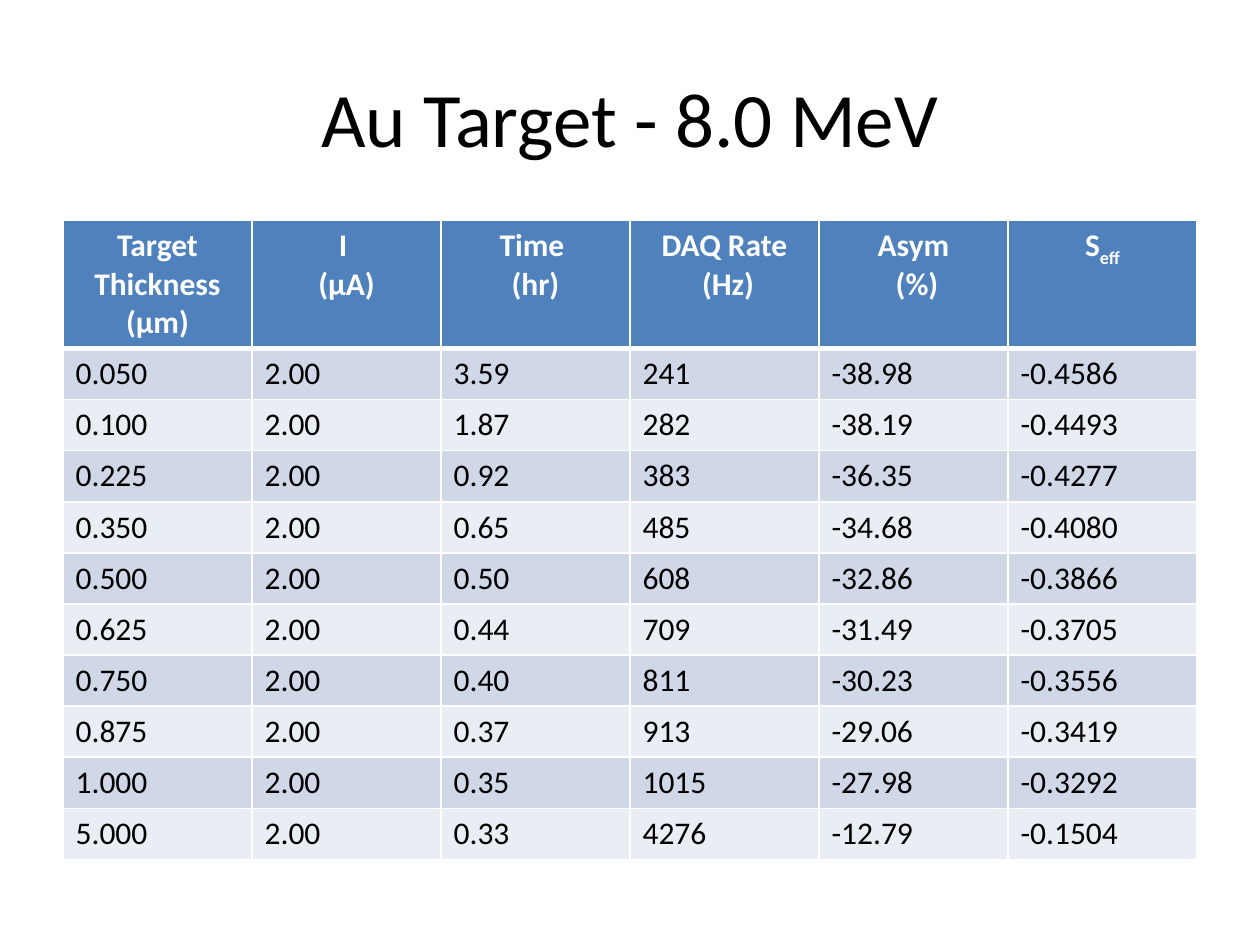
from lxml import etree
from pptx import Presentation
from pptx.dml.color import RGBColor
from pptx.enum.text import MSO_ANCHOR, PP_ALIGN
from pptx.oxml.ns import qn
from pptx.util import Pt

CENTER, LEFT = PP_ALIGN.CENTER, PP_ALIGN.LEFT
MIDDLE = MSO_ANCHOR.MIDDLE
TITLE_ONLY = 5

COLORS = {
    "text": "000000",
    "white": "FFFFFF",
    "header": "4F81BD",
    "band_dark": "D0D8E8",
    "band_light": "E9EDF4",
}

HEADERS = ["Target Thickness (µm)", "I \n(µA)", "Time \n(hr)",
           "DAQ Rate\n (Hz)", "Asym\n (%)", "S"]
MEASUREMENTS = [
    ["0.050", "2.00", "3.59", "241", "-38.98", "-0.4586"],
    ["0.100", "2.00", "1.87", "282", "-38.19", "-0.4493"],
    ["0.225", "2.00", "0.92", "383", "-36.35", "-0.4277"],
    ["0.350", "2.00", "0.65", "485", "-34.68", "-0.4080"],
    ["0.500", "2.00", "0.50", "608", "-32.86", "-0.3866"],
    ["0.625", "2.00", "0.44", "709", "-31.49", "-0.3705"],
    ["0.750", "2.00", "0.40", "811", "-30.23", "-0.3556"],
    ["0.875", "2.00", "0.37", "913", "-29.06", "-0.3419"],
    ["1.000", "2.00", "0.35", "1015", "-27.98", "-0.3292"],
    ["5.000", "2.00", "0.33", "4276", "-12.79", "-0.1504"],
]


class SlideBuilder:
    font = "Calibri"
    title_size = 44
    table_size = 18

    def __init__(self, slide):
        self.slide = slide

    def format_text(self, tf, size, color, align, bold=False):
        for p in tf.paragraphs:
            p.alignment = align
            for r in p.runs:
                r.font.name = self.font
                r.font.size = Pt(size)
                r.font.bold = bold
                r.font.color.rgb = RGBColor.from_string(COLORS[color])

    def title(self, text, left, top, width, height):
        sp = self.slide.shapes.title
        sp.left, sp.top, sp.width, sp.height = map(Pt, (left, top, width, height))
        tf = sp.text_frame
        tf.text = text
        tf.word_wrap = True
        tf.vertical_anchor = MIDDLE
        self.format_text(tf, self.title_size, "text", CENTER)

    def borders(self, cell, **widths):
        tc_pr = cell._tc.get_or_add_tcPr()
        for side in ("L", "R", "T", "B"):
            ln = etree.SubElement(tc_pr, qn(f"a:ln{side}"), w=str(Pt(widths.get(side, 1))))
            fill = etree.SubElement(ln, qn("a:solidFill"))
            etree.SubElement(fill, qn("a:srgbClr"), val=COLORS["white"])

    def subscript(self, cell, text):
        r = cell.text_frame.paragraphs[0].add_run()
        r.text = text
        r._r.get_or_add_rPr().set("baseline", "-25000")

    def table(self, headers, body, left, top, col_width, header_height, row_height):
        rows = [headers] + body
        height = header_height + row_height * len(body)
        frame = self.slide.shapes.add_table(
            len(rows), len(headers), Pt(left), Pt(top),
            Pt(col_width * len(headers)), Pt(height))
        table = frame.table
        for column in table.columns:
            column.width = Pt(col_width)
        for i, values in enumerate(rows):
            is_header = i == 0
            table.rows[i].height = Pt(header_height if is_header else row_height)
            band = "header" if is_header else "band_dark" if i % 2 else "band_light"
            for j, value in enumerate(values):
                cell = table.cell(i, j)
                cell.text_frame.text = value
                if is_header and value == "S":
                    self.subscript(cell, "eff")
                # The header is set off by a heavier rule
                self.borders(cell, T=3 if i == 1 else 1, B=3 if is_header else 1)
                cell.fill.solid()
                cell.fill.fore_color.rgb = RGBColor.from_string(COLORS[band])
                self.format_text(cell.text_frame, self.table_size,
                                 "white" if is_header else "text",
                                 CENTER if is_header else LEFT, is_header)


def main():
    prs = Presentation()
    prs.slide_width, prs.slide_height = Pt(720), Pt(540)
    s = SlideBuilder(prs.slides.add_slide(prs.slide_layouts[TITLE_ONLY]))

    # Title
    s.title("Au Target - 8.0 MeV", 36, 21.6, 648, 90)

    # Measurements by target thickness
    s.table(HEADERS, MEASUREMENTS, left=36, top=126, col_width=108,
            header_height=72.3, row_height=29.2)

    prs.save("out.pptx")


if __name__ == "__main__":
    main()
